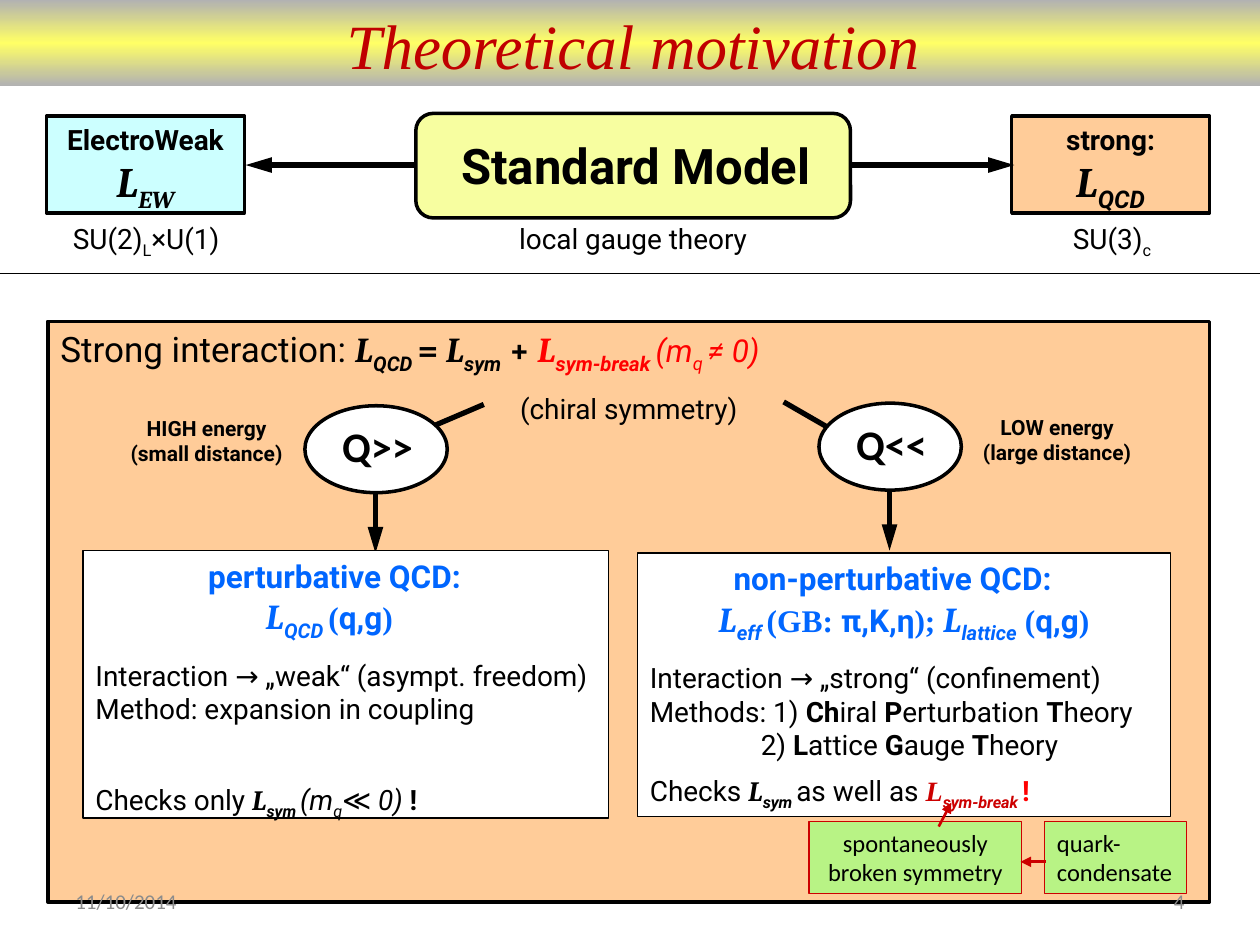
from copy import deepcopy
from dataclasses import dataclass, field

from lxml.etree import SubElement
from pptx import Presentation
from pptx.dml.color import RGBColor
from pptx.enum.shapes import MSO_CONNECTOR, MSO_SHAPE
from pptx.enum.text import MSO_ANCHOR, PP_ALIGN
from pptx.oxml.ns import qn
from pptx.util import Inches, Pt


@dataclass(frozen=True)
class Theme:
    # Colours
    black: str = "000000"
    white: str = "FFFFFF"
    red: str = "FF0000"
    dark_red: str = "CC0000"
    title: str = "C00000"
    blue: str = "0066FF"
    grey: str = "8C8C8C"
    cyan: str = "CCFFFF"
    yellow: str = "F7FEA0"
    orange: str = "FFCC99"
    green: str = "B8F385"
    banner: tuple = ("B2B2B2", "FFFF66", "B2B2B2")
    # Fonts
    body: str = "Roboto"
    math: str = "Cambria"
    serif: str = "Times New Roman"
    plain: str = "Calibri"
    # Type sizes
    huge: int = 36
    big: int = 28
    symbol: int = 24
    lead: int = 20
    head: int = 18
    text: int = 16
    note: int = 14
    small: int = 12


T = Theme()
LEFT, CENTER, RIGHT = PP_ALIGN.LEFT, PP_ALIGN.CENTER, PP_ALIGN.RIGHT


@dataclass
class Para:
    """A paragraph: runs are strings or (text, changes to the base style)."""
    runs: list
    align: PP_ALIGN = CENTER
    before: float = 0
    spacing: float = 1
    indent: float = 0
    right: float = 0
    style: dict = field(default_factory=dict)


def para(*runs, align=CENTER, before=0, spacing=1, indent=0, right=0, **style):
    return Para(runs, align, before, spacing, indent, right, style)


def lagrangian(index, index_font=T.body, font=T.math, **style):
    look = dict(bold=True, italic=True) | style
    return ("L", look | dict(font=font)), (index, look | dict(font=index_font, sub=True))


class Deck:
    """Places elements on a grid of 100 columns by 75 rows."""

    def __init__(self, prs):
        self.col, self.row = prs.slide_width / 100, prs.slide_height / 75
        self.s = prs.slides.add_slide(prs.slide_layouts[6])

    def at(self, x, y):
        return round(x * self.col), round(y * self.row)

    def set_paras(self, sp, paras, anchor=MSO_ANCHOR.TOP, wrap=True):
        tf = sp.text_frame
        tf.word_wrap, tf.vertical_anchor = wrap, anchor
        for i, item in enumerate(paras):
            p = tf.add_paragraph() if i else tf.paragraphs[0]
            p.alignment, p.space_before = item.align, Pt(item.before)
            p.line_spacing = item.spacing
            pPr = p._p.get_or_add_pPr()
            pPr.set("marL", str(Inches(item.indent)))
            pPr.set("marR", str(Inches(item.right)))
            for run in item.runs:
                text, change = (run, {}) if isinstance(run, str) else run
                self.add_text_run(p, text, **(item.style | change))

    def add_text_run(self, p, text, font=T.body, size=T.text, color=T.black,
                     bold=False, italic=False, sub=False):
        for i, part in enumerate(text.split("\n")):
            if i:
                p.add_line_break()
            if part:
                r = p.add_run()
                r.text, f = part, r.font
                f.name, f.size, f.bold, f.italic = font, Pt(size), bold, italic
                f.color.rgb = RGBColor.from_string(color)
                if sub:
                    r._r.get_or_add_rPr().set("baseline", "-25000")

    def text(self, x, y, w, h, *paras, **frame):
        self.set_paras(self.s.shapes.add_textbox(*self.at(x, y), *self.at(w, h)), paras, **frame)

    def shape(self, x, y, w, h, *paras, kind=MSO_SHAPE.RECTANGLE, fill=T.white,
              line=T.black, width=2, **frame):
        sp = self.s.shapes.add_shape(kind, *self.at(x, y), *self.at(w, h))
        sp.shadow.inherit = False
        sp.fill.solid()
        sp.fill.fore_color.rgb = RGBColor.from_string(fill)
        sp.line.color.rgb = RGBColor.from_string(line)
        sp.line.width = Pt(width)
        self.set_paras(sp, paras, **frame)

    def banner(self, x, y, w, h, colors):
        sp = self.s.shapes.add_shape(MSO_SHAPE.RECTANGLE, *self.at(x, y), *self.at(w, h))
        sp.shadow.inherit = False
        sp.line.fill.background()
        sp.fill.gradient()
        sp.fill.gradient_angle = 270
        first = next(sp._element.iter(qn("a:gs")))
        first.addnext(deepcopy(first))
        for i, (stop, color) in enumerate(zip(sp.fill.gradient_stops, colors)):
            stop.position = i / (len(colors) - 1)
            stop.color.rgb = RGBColor.from_string(color)

    def line(self, x1, y1, x2, y2, color=T.black, width=3, arrow=True, length="lg"):
        c = self.s.shapes.add_connector(MSO_CONNECTOR.STRAIGHT, *self.at(x1, y1), *self.at(x2, y2))
        c.line.color.rgb = RGBColor.from_string(color)
        c.line.width = Pt(width)
        spPr = c._element.spPr
        if arrow:
            SubElement(spPr.find(qn("a:ln")), qn("a:tailEnd"), type="triangle", w="med", len=length)
        SubElement(spPr, qn("a:effectLst"))

    def energy(self, x, y, label):
        self.shape(x, y, 11.3, 6.9, kind=MSO_SHAPE.OVAL)
        self.text(x + 1.3, y + 0.7, 8.9, 5,
                  para(label, font=T.plain, size=T.symbol, bold=True))


def main():
    prs = Presentation()
    prs.slide_width, prs.slide_height = Inches(10), Inches(7.5)
    d = Deck(prs)

    # Standard Model and its two sectors
    for x, fill, name, index, font in ((3.7, T.cyan, "ElectroWeak\n", "EW", T.math),
                                       (80.3, T.orange, "strong:\n", "QCD", T.body)):
        d.shape(x, 9.2, 15.7, 7.7,
                para((name, dict(bold=True)), *lagrangian(index, font, size=T.symbol)), fill=fill)
    d.shape(33, 9, 34.5, 8.3, kind=MSO_SHAPE.ROUNDED_RECTANGLE, fill=T.yellow)
    d.text(34.3, 10.3, 32.3, 5.7, para("Standard Model", size=T.big, bold=True))
    d.line(32.9, 13.1, 19.5, 13.1)
    d.line(67.5, 13.1, 80.5, 13.1)
    sub = dict(sub=True)
    for x, w, runs in ((3.9, 15.4, ["SU(2)", ("L", sub), "×U(1)"]),
                       (38.7, 23.1, ["local gauge theory"]),
                       (83.7, 9.1, ["SU(3)", ("c", sub)])):
        d.text(x, 17.1, w, 3.7, para(*runs))
    d.line(0, 21.7, 100, 21.7, width=0.25, arrow=False)

    # Strong interaction panel
    strong, mass = dict(bold=True, font=T.math), dict(size=T.head, color=T.red, italic=True)
    d.shape(3.8, 25.5, 92.2, 46.1,
            para("Strong interaction: ", *lagrangian("QCD "), ("= ", strong),
                 *lagrangian("sym"), (" + ", strong), *lagrangian("sym-break ", color=T.red),
                 ("(m", mass), ("q ", mass | sub), ("≠ 0)", mass), align=LEFT, size=T.lead),
            para("(chiral symmetry)", before=9), fill=T.orange)

    # High and low energy branches
    d.line(62.2, 31.9, 68.1, 35.3)
    d.line(38.4, 32.1, 30.2, 35.6)
    for x, y, label in ((8.7, 32.5, "HIGH energy\n(small distance)"),
                        (76.2, 32.4, "LOW energy\n(large distance)")):
        d.text(x, y, 15.4, 5, para(label, size=T.small, bold=True))
    for x, y, label in ((24.2, 32.2, "Q>>"), (65, 32, "Q<<")):
        d.energy(x, y, label)
        d.line(x + 5.6, y + 7, x + 5.6, y + 11.7)

    # Perturbative and non-perturbative panels
    heading = dict(size=T.head, color=T.blue, bold=True)
    big, serif, bold = dict(size=T.lead, color=T.blue), dict(font=T.serif), dict(bold=True)
    italic = dict(italic=True)
    d.shape(6.6, 43.7, 41.7, 21.2,
            para("perturbative QCD:", right=0.18, **heading),
            para(*lagrangian("QCD ", **big), ("(", serif), "q,g", (")", serif),
                 right=0.26, **heading),
            para("Interaction → „weak“ (asympt. freedom)", align=LEFT, before=9),
            para("Method: expansion in coupling", align=LEFT),
            para("Checks only ", *lagrangian("sym "), ("(m", italic), ("q", italic | sub),
                 ("≪ 0) ", italic), ("!", bold), align=LEFT, before=26, spacing=1.3),
            width=1)
    d.shape(50.6, 43.9, 42.3, 20.9,
            para("non-perturbative QCD:", right=0.18, **heading),
            para(*lagrangian("eff ", **big), ("(GB: ", serif), "π,K,η", ("); ", serif),
                 *lagrangian("lattice", **big), (" (", serif), "q,g", (")", serif), **heading),
            para("Interaction → „strong“ (confinement)", align=LEFT, before=9),
            para("Methods: 1) ", ("Ch", bold), "iral ", ("P", bold), "erturbation ",
                 ("T", bold), "heory", align=LEFT),
            para("2) ", ("L", bold), "attice ", ("G", bold), "auge ", ("T", bold), "heory",
                 align=LEFT, indent=0.88),
            para("Checks ", *lagrangian("sym "), "as well as ",
                 *lagrangian("sym-break ", font=T.serif, color=T.dark_red),
                 ("!", dict(bold=True, color=T.red)), align=LEFT, before=7),
            width=1)

    # Origin of the symmetry breaking
    for x, w, words, align, wrap in (
            (64.2, 16.9, ("spontaneously", "broken symmetry"), CENTER, True),
            (82.9, 11.3, ("quark-", "condensate"), LEFT, False)):
        d.shape(x, 65.2, w, 5.7,
                *(para(t, align=align, font=T.plain, size=T.note) for t in words),
                fill=T.green, line=T.dark_red, width=0.75, anchor=MSO_ANCHOR.MIDDLE, wrap=wrap)
    for ends in ((74.5, 65.6, 75.5, 63.7), (83, 68.4, 81, 68.4)):
        d.line(*ends, color=T.dark_red, width=1.5, length="med")

    # Title banner and footer
    d.banner(-0.1, 0, 100.1, 6.8, T.banner)
    d.text(19.2, 0, 62.1, 5.6, para("Theoretical motivation", font=T.serif, size=T.huge,
                                    color=T.title, italic=True), wrap=False)
    for x, label, align in ((5, "11/10/2014", LEFT), (71.7, "4", RIGHT)):
        d.text(x, 69.5, 23.3, 4, para(label, align=align, font=T.plain, size=T.small,
                                      color=T.grey), anchor=MSO_ANCHOR.MIDDLE)

    prs.save("out.pptx")


if __name__ == "__main__":
    main()
